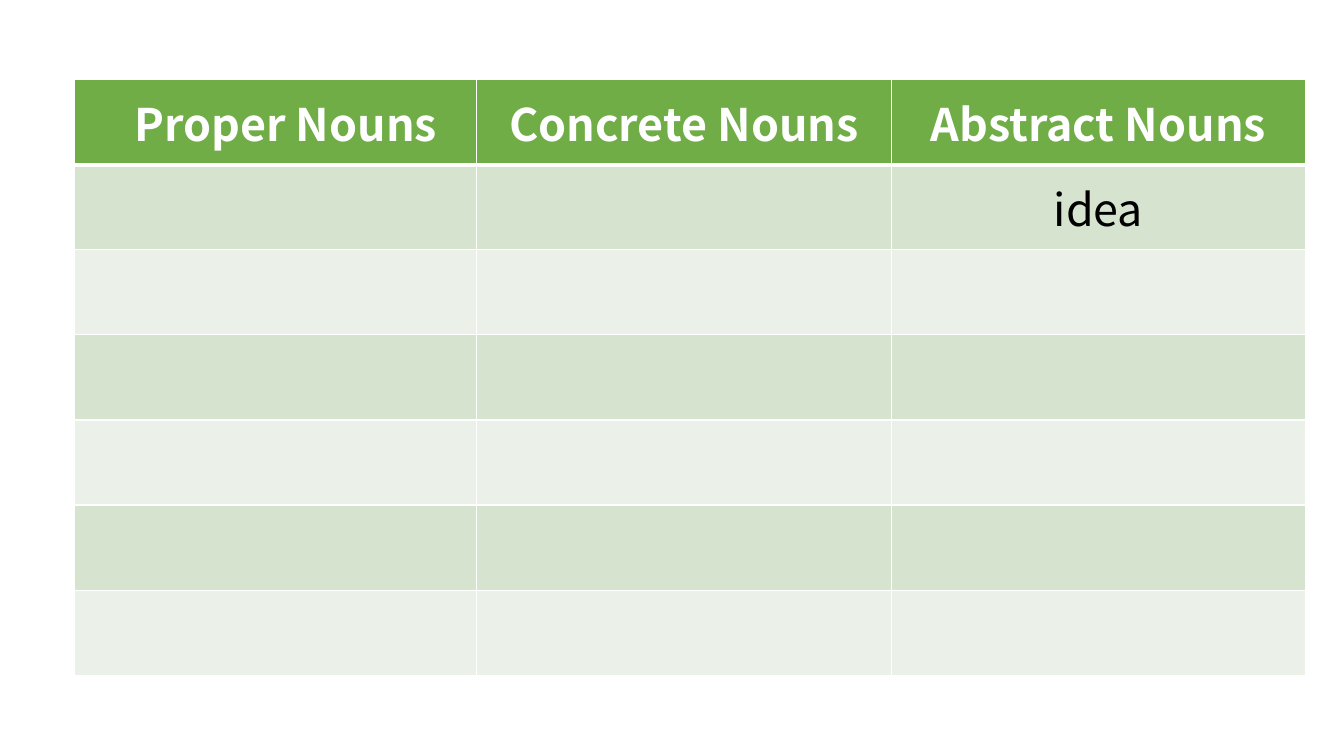
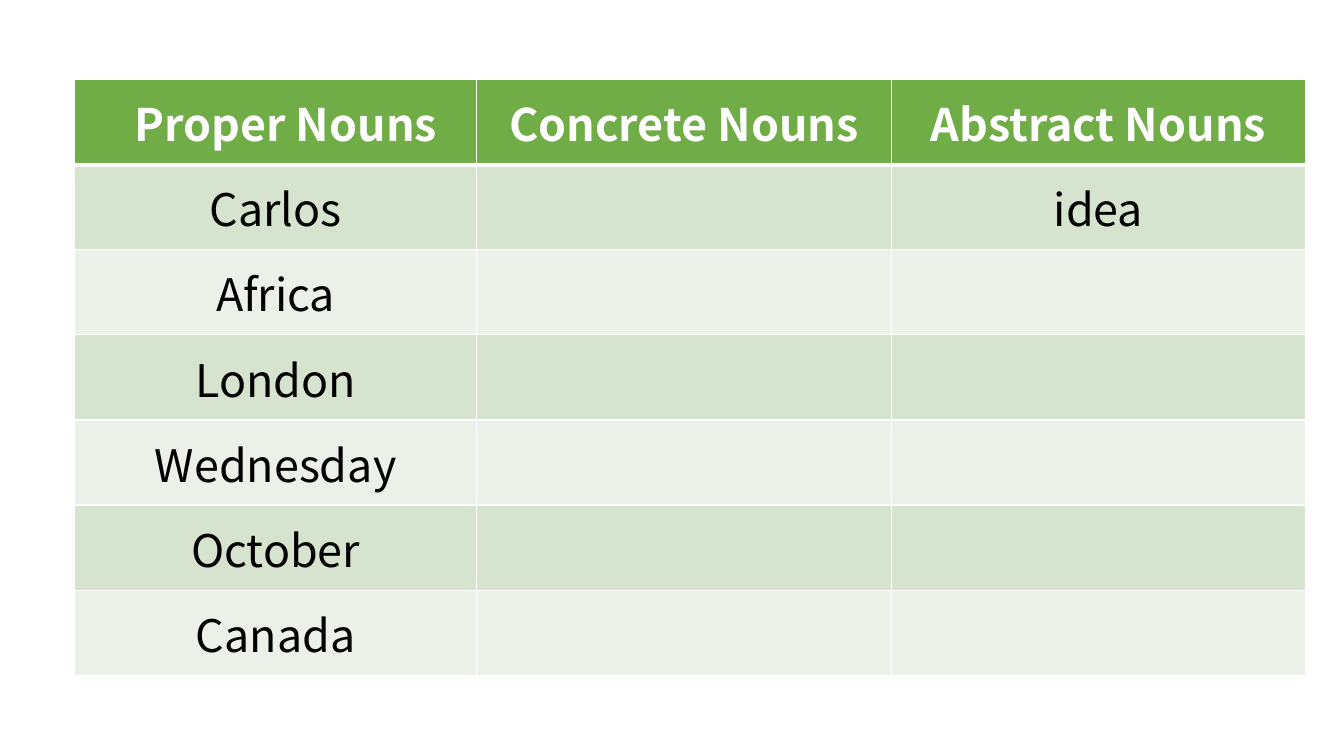
import dataclasses

import lxml.etree
import pptx
import pptx.dml.color
import pptx.enum.text
import pptx.oxml.ns
import pptx.table
import pptx.util

Inches = pptx.util.Inches

FONT_NAME = "Noto Sans CJK JP"
WHITE = "FFFFFF"
BLACK = "000000"
HEADER_GREEN = "70AD47"
BAND_COLOURS = ("D5E3CF", "EBF1E9")
THIN_RULE = 1
HEADER_RULE = 3
TABLE_LEFT, TABLE_TOP = 0.74, 0.79
TABLE_HEIGHT = 5.91
WORD_ROWS = 6


@dataclasses.dataclass(frozen=True)
class NounColumn:
    """A column of the noun table."""

    heading: str
    width: float
    words: tuple[str, ...] = ()
    heading_margin: float = 0.1


PROPER = NounColumn("Proper Nouns", 3.99, heading_margin=0.3)
CONCRETE = NounColumn("Concrete Nouns", 4.11)
ABSTRACT = NounColumn("Abstract Nouns", 4.11, ("idea",))
PROPER_ANSWERS = dataclasses.replace(
    PROPER, words=("Carlos", "Africa", "London", "Wednesday", "October", "Canada")
)
SLIDES = ((PROPER, CONCRETE, ABSTRACT), (PROPER_ANSWERS, CONCRETE, ABSTRACT))


def colour(value: str) -> pptx.dml.color.RGBColor:
    """Turn a hex string into a colour."""
    return pptx.dml.color.RGBColor.from_string(value)


def add_borders(cell: pptx.table._Cell, top: int, bottom: int) -> None:
    """Rule the four sides of a cell in white, with widths in points."""
    properties = cell._tc.get_or_add_tcPr()
    qualified = pptx.oxml.ns.qn
    widths = {"lnL": THIN_RULE, "lnR": THIN_RULE, "lnT": top, "lnB": bottom}
    for side, width in widths.items():
        line = lxml.etree.SubElement(
            properties, qualified(f"a:{side}"), w=str(pptx.util.Pt(width))
        )
        fill = lxml.etree.SubElement(line, qualified("a:solidFill"))
        lxml.etree.SubElement(fill, qualified("a:srgbClr"), val=WHITE)


def format_cell(cell: pptx.table._Cell, text: str, row: int) -> None:
    """Fill, rule and write one cell according to its row."""
    is_header = row == 0
    add_borders(
        cell,
        top=HEADER_RULE if row == 1 else THIN_RULE,
        bottom=HEADER_RULE if is_header else THIN_RULE,
    )
    cell.fill.solid()
    cell.fill.fore_color.rgb = colour(
        HEADER_GREEN if is_header else BAND_COLOURS[(row - 1) % 2]
    )
    cell.vertical_anchor = pptx.enum.text.MSO_ANCHOR.MIDDLE
    paragraph = cell.text_frame.paragraphs[0]
    paragraph.text = text
    paragraph.alignment = pptx.enum.text.PP_ALIGN.CENTER
    for run in paragraph.runs:
        run.font.name = FONT_NAME
        run.font.size = pptx.util.Pt(32)
        run.font.bold = is_header
        run.font.color.rgb = colour(WHITE if is_header else BLACK)


def add_noun_slide(
    presentation: pptx.presentation.Presentation, columns: tuple[NounColumn, ...]
) -> None:
    """Add a slide holding the noun table."""
    slide = presentation.slides.add_slide(presentation.slide_layouts[6])
    table = slide.shapes.add_table(
        WORD_ROWS + 1,
        len(columns),
        Inches(TABLE_LEFT),
        Inches(TABLE_TOP),
        Inches(sum(column.width for column in columns)),
        Inches(TABLE_HEIGHT),
    ).table
    for index, column in enumerate(columns):
        table.columns[index].width = Inches(column.width)
        blanks = ("",) * (WORD_ROWS - len(column.words))
        for row, text in enumerate((column.heading, *column.words, *blanks)):
            format_cell(table.cell(row, index), text, row)
        table.cell(0, index).margin_left = Inches(column.heading_margin)


def main() -> None:
    """Build and save the presentation."""
    presentation = pptx.Presentation()
    presentation.slide_width = Inches(13.33)
    presentation.slide_height = Inches(7.5)
    for columns in SLIDES:
        add_noun_slide(presentation, columns)
    presentation.save("out.pptx")


if __name__ == "__main__":
    main()
